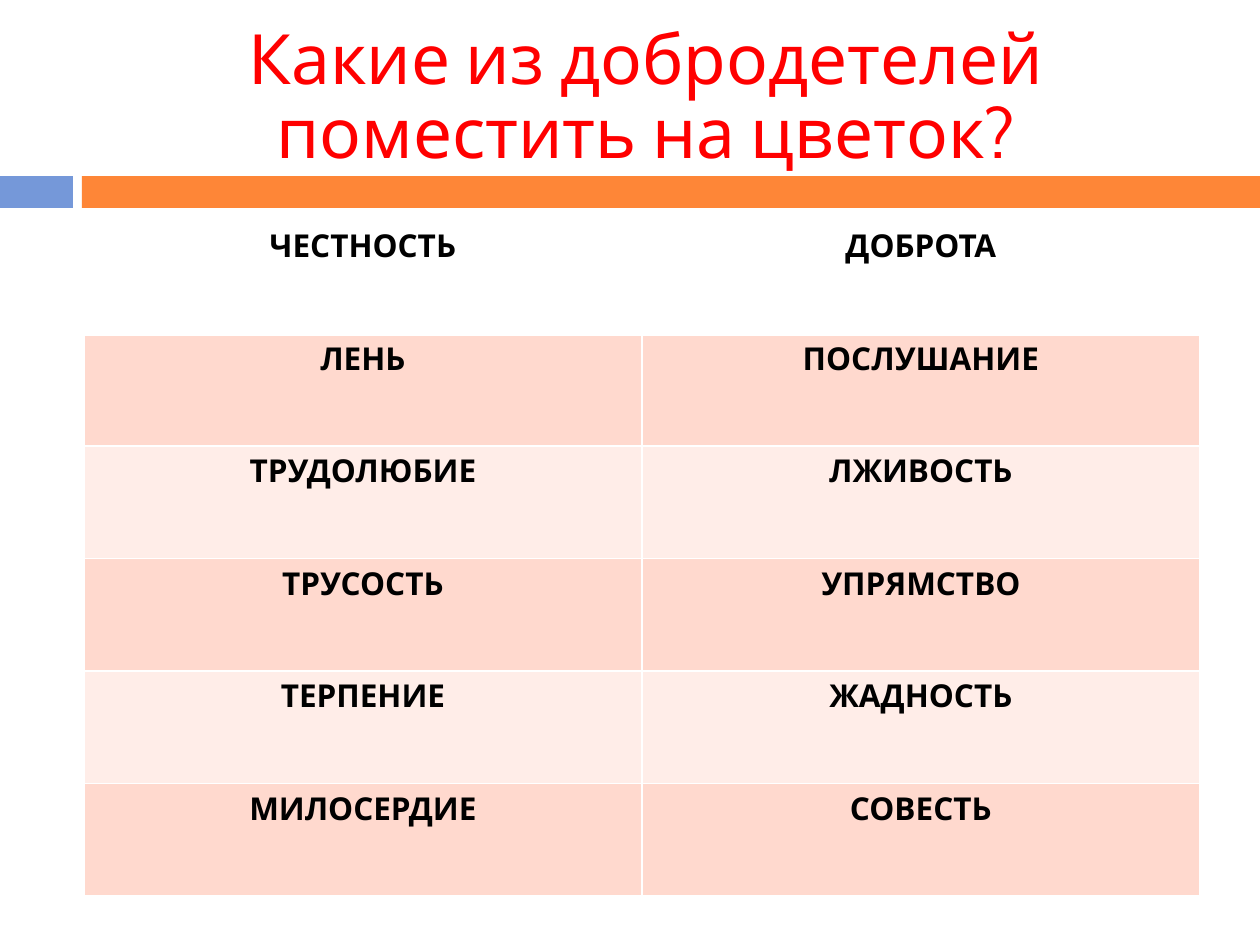
from dataclasses import dataclass

from lxml.etree import SubElement
from pptx import Presentation
from pptx.dml.color import RGBColor
from pptx.enum.shapes import MSO_SHAPE as Shape
from pptx.enum.text import MSO_ANCHOR as Anchor, PP_ALIGN as Align
from pptx.oxml.ns import qn
from pptx.util import Emu, Pt

EMU_PER_PX = 914400 / 126
FONT = "Cabin"
WHITE = "FFFFFF"
BANDS = ("FFEDE8", "FFD9CE")


@dataclass(frozen=True)
class Bar:
    x: int
    y: int
    w: int
    h: int
    color: str


BARS = (
    Bar(0, 176, 73, 32, "7598D9"),
    Bar(82, 176, 1178, 32, "FE8637"),
)
QUALITIES = (
    ("ЧЕСТНОСТЬ", "ДОБРОТА"),
    ("ЛЕНЬ", "ПОСЛУШАНИЕ"),
    ("ТРУДОЛЮБИЕ", "ЛЖИВОСТЬ"),
    ("ТРУСОСТЬ", "УПРЯМСТВО"),
    ("ТЕРПЕНИЕ", "ЖАДНОСТЬ"),
    ("МИЛОСЕРДИЕ", "СОВЕСТЬ"),
)


def px(n: int) -> Emu:
    return Emu(round(n * EMU_PER_PX))


def rgb(color: str) -> RGBColor:
    return RGBColor.from_string(color)


def add_bar(s, bar: Bar) -> None:
    sp = s.shapes.add_shape(Shape.RECTANGLE, px(bar.x), px(bar.y), px(bar.w), px(bar.h))
    sp.shadow.inherit = False
    sp.fill.solid()
    sp.fill.fore_color.rgb = rgb(bar.color)
    sp.line.fill.background()


def set_text(tf, text: str, size: float, color: str, bold: bool = False) -> None:
    tf.text = text
    p = tf.paragraphs[0]
    p.alignment = Align.CENTER
    font = p.runs[0].font
    font.name, font.size, font.bold = FONT, Pt(size), bold
    font.color.rgb = rgb(color)


def add_title(s, text: str) -> None:
    sp = s.shapes.add_textbox(px(84), px(31), px(1124), px(136))
    tf = sp.text_frame
    tf.word_wrap = True
    tf.vertical_anchor = Anchor.MIDDLE
    set_text(tf, text, 39.6, "FF0000")
    tf.paragraphs[0].line_spacing = 0.9


def set_borders(cell, top: int, bottom: int) -> None:
    tc_pr = cell._tc.get_or_add_tcPr()
    sides = {"a:lnL": 1, "a:lnR": 1, "a:lnT": top, "a:lnB": bottom}
    for i, (tag, width) in enumerate(sides.items()):
        ln = SubElement(tc_pr, qn(tag), w=str(Pt(width)))
        fill = SubElement(ln, qn("a:solidFill"))
        SubElement(fill, qn("a:srgbClr"), val=WHITE)
        tc_pr.insert(i, ln)


def add_qualities(s, rows: tuple[tuple[str, str], ...]) -> None:
    frame = s.shapes.add_table(len(rows), 2, px(84), px(221), px(1116), px(675))
    table = frame.table
    for i, row in enumerate(rows):
        for j, text in enumerate(row):
            cell = table.cell(i, j)
            set_text(cell.text_frame, text, 18, "000000", bold=True)
            if i == 0:
                cell.fill.background()
            else:
                cell.fill.solid()
                cell.fill.fore_color.rgb = rgb(BANDS[i % 2])
            set_borders(cell, top=3 if i == 1 else 1, bottom=3 if i == 0 else 1)


def main() -> None:
    prs = Presentation()
    prs.slide_width, prs.slide_height = px(1260), px(945)
    s = prs.slides.add_slide(prs.slide_layouts[6])
    for bar in BARS:
        add_bar(s, bar)
    add_title(s, "Какие из добродетелей поместить на цветок?")
    add_qualities(s, QUALITIES)
    prs.save("out.pptx")


if __name__ == "__main__":
    main()
